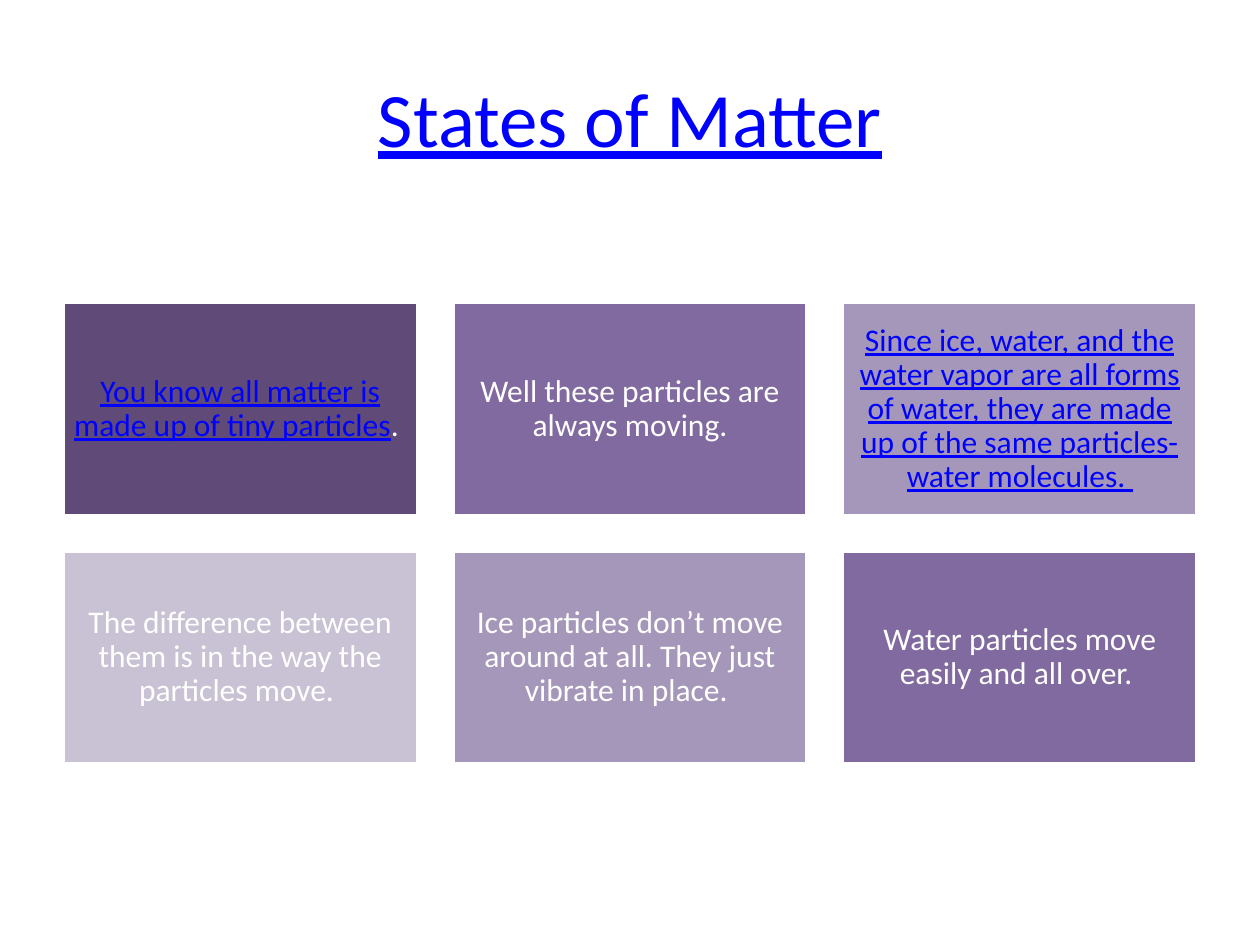
"""Build the States of Matter slide: a title above a grid of six cards."""
from pptx import Presentation
from pptx.dml.color import RGBColor
from pptx.enum.shapes import MSO_SHAPE as SHAPE
from pptx.enum.text import MSO_ANCHOR as ANCHOR, PP_ALIGN as ALIGN
from pptx.util import Pt

COLORS = {
    "white": "FFFFFF",
    "link": "0000FF",
    "dark": "5F4A78",
    "purple": "816A9F",
    "mauve": "A597B9",
    "pale": "C9C2D4",
}
LINK = {"color": "link", "underline": True}
PLAIN = {"color": "white", "underline": False}
CARDS = [
    ("dark", [("You know all matter is made up of tiny particles", LINK), (". ", PLAIN)]),
    ("purple", [("Well these particles are always moving.", PLAIN)]),
    ("mauve", [("Since ice, water, and the water vapor are all forms of water, "
                "they are made up of the same particles-water molecules. ", LINK)]),
    ("pale", [("The difference between them is in the way the particles move. ", PLAIN)]),
    ("mauve", [("Ice particles don’t move around at all. They just vibrate in place. ", PLAIN)]),
    ("purple", [("Water particles move easily and all over. ", PLAIN)]),
]
COLUMNS = 3
LEFT, TOP = 36, 173
CARD_W, CARD_H, GAP = 202.5, 121.5, 20.25


def rgb(name):
    return RGBColor.from_string(COLORS[name])


def write(sp, runs, size, frame, spacing=1.0):
    tf = sp.text_frame
    for key, value in {"word_wrap": True, "vertical_anchor": ANCHOR.MIDDLE, **frame}.items():
        setattr(tf, key, value)
    p = tf.paragraphs[0]
    p.alignment, p.line_spacing = ALIGN.CENTER, spacing
    for text, style in runs:
        r = p.add_run()
        r.text = text
        font = {"name": "Calibri", "size": Pt(size), "underline": style["underline"]}
        for key, value in font.items():
            setattr(r.font, key, value)
        r.font.color.rgb = rgb(style["color"])


def add_title(s, text):
    sp = s.shapes.add_textbox(Pt(36), Pt(21.6), Pt(648), Pt(90))
    write(sp, [(text, LINK)], 44, {})


def add_card(s, index, fill, runs):
    row, col = divmod(index, COLUMNS)
    sp = s.shapes.add_shape(
        SHAPE.RECTANGLE,
        Pt(LEFT + col * (CARD_W + GAP)), Pt(TOP + row * (CARD_H + GAP)),
        Pt(CARD_W), Pt(CARD_H))
    sp.shadow.inherit = False
    sp.fill.solid()
    sp.fill.fore_color.rgb = rgb(fill)
    sp.line.color.rgb = rgb("white")
    sp.line.width = Pt(2)
    margins = {f"margin_{side}": Pt(5) for side in ("left", "top", "right", "bottom")}
    write(sp, runs, 18, margins, 0.9)


def main():
    prs = Presentation()
    prs.slide_width, prs.slide_height = Pt(720), Pt(540)
    s = prs.slides.add_slide(prs.slide_layouts[6])
    add_title(s, "States of Matter")
    for index, (fill, runs) in enumerate(CARDS):
        add_card(s, index, fill, runs)
    prs.save("out.pptx")


if __name__ == "__main__":
    main()
